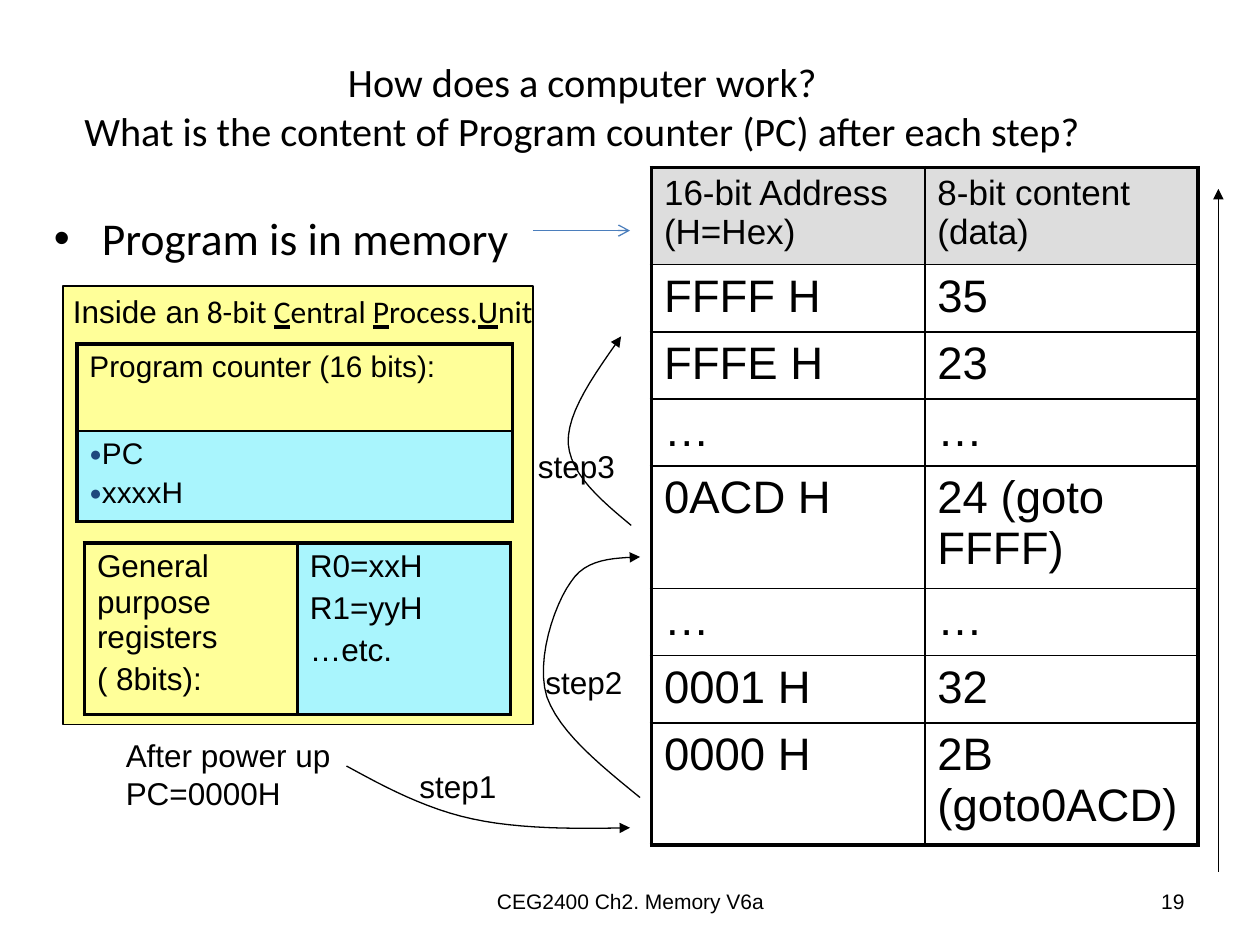
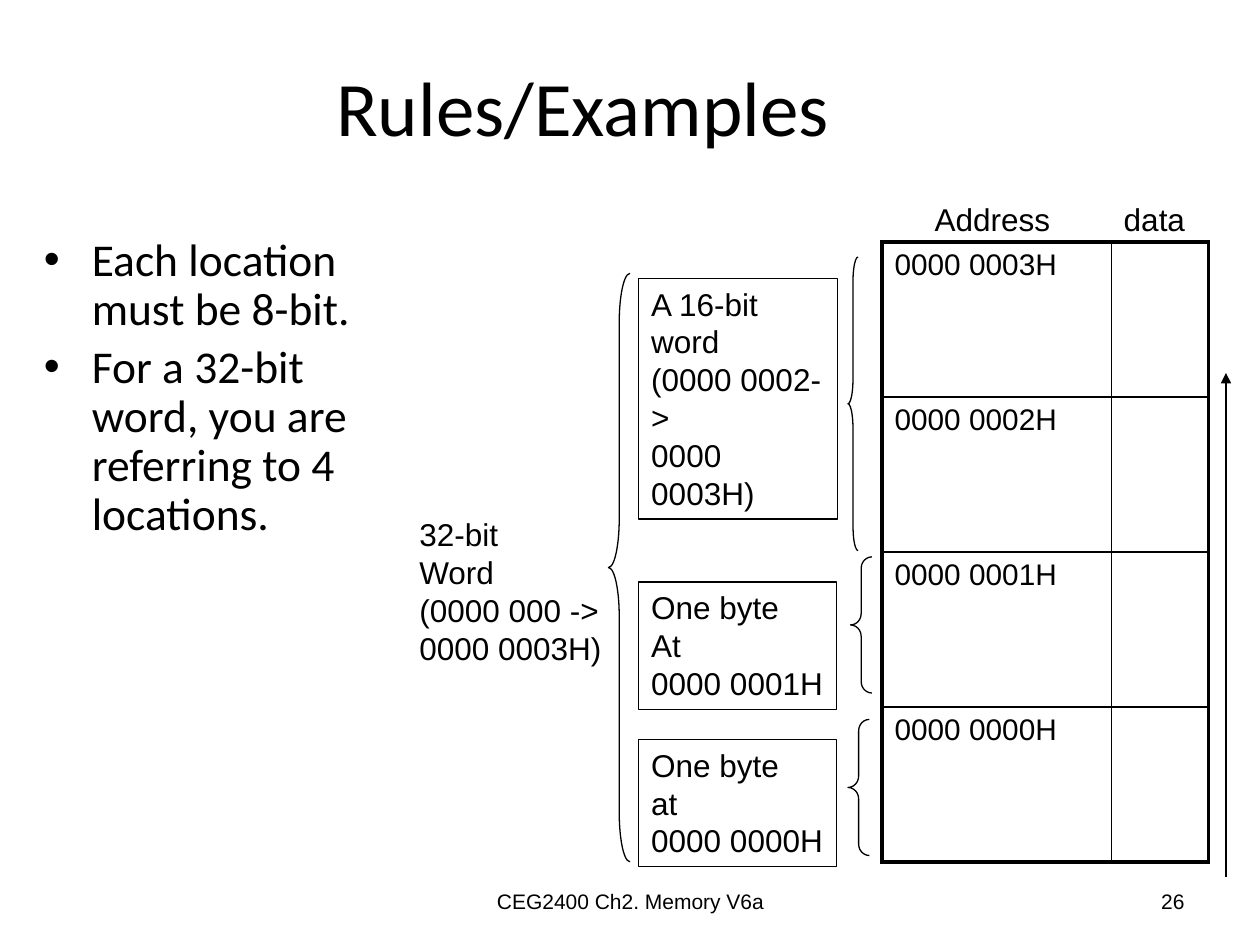
from lxml.etree import SubElement
from pptx import Presentation
from pptx.dml.color import RGBColor
from pptx.enum.shapes import MSO_CONNECTOR, MSO_SHAPE
from pptx.enum.text import MSO_ANCHOR, MSO_AUTO_SIZE, PP_ALIGN
from pptx.oxml.ns import qn
from pptx.util import Inches, Pt

BLACK = RGBColor(0x00, 0x00, 0x00)
GREY = RGBColor(0xDD, 0xDD, 0xDD)
YELLOW = RGBColor(0xFF, 0xFF, 0x99)
CYAN = RGBColor(0xA9, 0xF5, 0xFD)
BLUE = RGBColor(0x4B, 0x7E, 0xBC)
NAVY = RGBColor(0x1F, 0x49, 0x7D)
THICK, MEDIUM, THIN = 2.25, 1, 0.75
FOOTER = "CEG2400 Ch2. Memory V6a"


def write_lines(frame, lines, size, font="Arial", align=PP_ALIGN.LEFT,
                gap=0, spacing=None, hanging=False):
    """Fill a text frame with one paragraph per line; gap is a share of the size."""
    for number, line in enumerate(lines):
        para = frame.paragraphs[0] if number == 0 else frame.add_paragraph()
        para.text = line
        para.alignment = align
        para.font.size = Pt(size)
        para.font.name = font
        para.font.color.rgb = BLACK
        if number and gap:
            para.space_before = Pt(size * gap)
        if spacing:
            para.line_spacing = spacing
        if hanging:
            props = para._p.get_or_add_pPr()
            props.set("marL", str(Inches(0.38)))
            props.set("indent", str(-Inches(0.38)))
            SubElement(props, qn("a:buFont"), typeface="Arial")
            SubElement(props, qn("a:buChar"), char="•")


def add_grid(page, left, top, widths, heights, rows, size, fills=None, inner=MEDIUM):
    """Add a table with a thick frame; fills holds one row of colours per table row."""
    table = page.shapes.add_table(
        len(heights), len(widths), Inches(left), Inches(top),
        Inches(sum(widths)), Inches(sum(heights))).table
    table.first_row = table.horz_banding = False
    for column, width in zip(table.columns, widths):
        column.width = Inches(width)
    last_row, last_column = len(heights) - 1, len(widths) - 1
    for r, height in enumerate(heights):
        table.rows[r].height = Inches(height)
        for c, text in enumerate(rows[r]):
            cell = table.cell(r, c)
            write_lines(cell.text_frame, text.split("\n"), size, gap=0.2)
            props = cell._tc.get_or_add_tcPr()
            edges = {"L": c == 0, "R": c == last_column,
                     "T": r == 0, "B": r == last_row}
            for side, outer in edges.items():
                border = SubElement(props, qn(f"a:ln{side}"),
                                    w=str(Pt(THICK if outer else inner)))
                paint = SubElement(border, qn("a:solidFill"))
                SubElement(paint, qn("a:srgbClr"), val=str(BLACK))
            colour = fills[r][c] if fills else None
            if colour:
                cell.fill.solid()
                cell.fill.fore_color.rgb = colour
            else:
                cell.fill.background()
    return table


deck = Presentation()
deck.slide_width, deck.slide_height = Inches(10), Inches(7.5)

# Titles, body text and footers
pages = []
for title, title_size, number, body, body_box, spacing in [
    ("How does a computer work?\v"
     "What is the content of Program counter (PC) after each step?", 23, "19",
     ["Program is in memory"], (0.33, 1.62, 4.58, 4.82), None),
    ("Rules/Examples", 44, "26",
     ["Each location must be 8-bit.",
      "For a 32-bit word, you are referring to 4 locations."],
     (0.25, 1.83, 3.08, 4.82), 0.9),
]:
    page = deck.slides.add_slide(deck.slide_layouts[5])
    pages.append(page)
    heading = page.shapes.title
    heading.left, heading.top = Inches(0.5), Inches(0.13)
    heading.width, heading.height = Inches(8.25), Inches(1.42)
    heading.text_frame.auto_size = MSO_AUTO_SIZE.NONE
    heading.text_frame.vertical_anchor = MSO_ANCHOR.MIDDLE
    write_lines(heading.text_frame, [title], title_size, "Calibri", PP_ALIGN.CENTER)

    box = page.shapes.add_textbox(*map(Inches, body_box))
    box.text_frame.word_wrap = True
    write_lines(box.text_frame, body, 26, "Calibri", gap=0.2,
                spacing=spacing, hanging=True)

    for text, left, width, align in [(FOOTER, 3.42, 3.17, PP_ALIGN.CENTER),
                                     (number, 7.17, 2.33, PP_ALIGN.RIGHT)]:
        box = page.shapes.add_textbox(Inches(left), Inches(6.95),
                                      Inches(width), Inches(0.4))
        box.text_frame.word_wrap = True
        box.text_frame.vertical_anchor = MSO_ANCHOR.MIDDLE
        write_lines(box.text_frame, [text], 12, align=align)
computer, rules = pages

# Memory table and the processor
add_grid(computer, 5.17, 1.33, [2.17, 2.17],
         [0.77, 0.53, 0.53, 0.53, 0.97, 0.53, 0.53, 0.97],
         [("", "")] + [("FFFF H", "35"), ("FFFE H", "23"), ("…", "…"),
                       ("0ACD H", "24 (goto FFFF)"), ("…", "…"),
                       ("0001 H", "32"), ("0000 H", "2B (goto0ACD)")],
         26, [(GREY, GREY)] + [(None, None)] * 7)
memory = computer.shapes[-1].table
for c, label in enumerate(["16-bit Address (H=Hex)", "8-bit content (data)"]):
    write_lines(memory.cell(0, c).text_frame, [label], 20)

processor = computer.shapes.add_shape(MSO_SHAPE.RECTANGLE, Inches(0.5), Inches(2.27),
                                      Inches(3.73), Inches(3.48))
processor.shadow.inherit = False
processor.fill.solid()
processor.fill.fore_color.rgb = YELLOW
processor.line.color.rgb = BLACK
processor.line.width = Pt(THIN)

box = computer.shapes.add_textbox(Inches(0.48), Inches(2.27), Inches(3.94), Inches(0.4))
box.text_frame.word_wrap = False
para = box.text_frame.paragraphs[0]
para.font.size = Pt(18)
for text, font, underlined in [
    ("Inside a", "Arial", False), ("n 8-bit ", "Calibri", False),
    ("C", "Calibri", True), ("entral ", "Calibri", False),
    ("P", "Calibri", True), ("rocess.", "Calibri", False),
    ("U", "Calibri", True), ("nit", "Calibri", False),
]:
    span = para.add_run()
    span.text = text
    span.font.size = Pt(18)
    span.font.name = font
    span.font.underline = underlined
    span.font.color.rgb = BLACK

add_grid(computer, 0.67, 4.31, [1.69, 1.69], [1.36],
         [("General purpose registers\n( 8bits):", "R0=xxH\nR1=yyH\n…etc.")],
         18, [(YELLOW, CYAN)], inner=THICK)
counter = add_grid(computer, 0.61, 2.73, [3.46], [0.69, 0.72],
                   [("Program counter (16 bits):",), ("PC\nxxxxH",)],
                   17, [(YELLOW,), (CYAN,)])
for para in counter.cell(1, 0).text_frame.paragraphs:
    props = para._p.get_or_add_pPr()
    SubElement(SubElement(props, qn("a:buClr")), qn("a:srgbClr"), val=str(NAVY))
    SubElement(props, qn("a:buSzPct"), val="70000")
    SubElement(props, qn("a:buFont"), typeface="Arial")
    SubElement(props, qn("a:buChar"), char="●")

# Address table and its boxes
add_grid(rules, 7, 1.92, [1.82, 0.77], [1.23] * 4,
         [(f"0000 000{n}H", "") for n in (3, 2, 1, 0)], 17)

for top, width, height, wrap, lines in [
    (2.21, 1.58, 1.91, True, ["A 16-bit word", "(0000 0002->", "0000 0003H)"]),
    (5.87, 1.57, 1.01, False, ["One byte", "at", "0000 0000H"]),
    (4.62, 1.57, 1.01, False, ["One byte", "At", "0000 0001H"]),
]:
    box = rules.shapes.add_shape(MSO_SHAPE.RECTANGLE, Inches(5.07), Inches(top),
                                 Inches(width), Inches(height))
    box.shadow.inherit = False
    box.fill.background()
    box.line.color.rgb = BLACK
    box.line.width = Pt(THIN)
    box.text_frame.word_wrap = wrap
    box.text_frame.vertical_anchor = MSO_ANCHOR.TOP
    write_lines(box.text_frame, lines, 18)

for left, top, width, height in [(4.83, 2.17, 0.17, 4.67), (6.73, 2.04, 0.08, 2.33),
                                 (6.75, 4.42, 0.17, 1.08), (6.73, 5.71, 0.17, 1.08)]:
    brace = rules.shapes.add_shape(MSO_SHAPE.LEFT_BRACE, Inches(left), Inches(top),
                                   Inches(width), Inches(height))
    brace.shadow.inherit = False
    brace.adjustments[0] = height / width / 12
    brace.fill.background()
    brace.line.color.rgb = BLACK
    brace.line.width = Pt(THIN)

# Free labels
for page, left, top, width, height, lines in [
    (computer, 0.9, 5.79, 1.83, 0.7, ["After power up", "PC=0000H"]),
    (computer, 3.23, 6.04, 0.81, 0.4, ["step1"]),
    (computer, 4.23, 5.21, 0.81, 0.4, ["step2"]),
    (computer, 4.17, 3.5, 0.81, 0.4, ["step3"]),
    (rules, 3.23, 4.04, 1.75, 1.3,
     ["32-bit", "Word", "(0000 000 ->", "0000 0003H)"]),
    (rules, 7.32, 1.54, 1.19, 0.4, ["Address"]),
    (rules, 8.82, 1.54, 0.69, 0.4, ["data"]),
]:
    box = page.shapes.add_textbox(Inches(left), Inches(top),
                                  Inches(width), Inches(height))
    box.text_frame.word_wrap = False
    write_lines(box.text_frame, lines, 18)

# Straight and curved arrows
arrows = []
for page, x1, y1, x2, y2, colour, head in [
    (computer, 9.67, 6.92, 9.67, 1.5, BLACK, "triangle"),
    (computer, 4.23, 1.83, 5, 1.83, BLUE, "arrow"),
    (rules, 9.73, 6.96, 9.73, 2.96, BLACK, "triangle"),
]:
    arrow = page.shapes.add_connector(MSO_CONNECTOR.STRAIGHT, Inches(x1), Inches(y1),
                                      Inches(x2), Inches(y2))
    arrows.append((arrow, colour, head))

# Each step is a chain of cubic curves: start, then two handles and an end per curve
STEPS = [
    [(2.75, 6.08), (3.06, 6.25), (3.38, 6.42), (3.75, 6.5),
     (4.12, 6.58), (4.56, 6.58), (5, 6.57)],
    [(5.08, 6.33), (4.76, 6.07), (4.44, 5.81), (4.34, 5.53),
     (4.25, 5.24), (4.4, 4.8), (4.53, 4.62), (4.65, 4.43), (4.87, 4.43), (5.08, 4.42)],
    [(5.01, 4.17), (4.77, 3.97), (4.53, 3.77), (4.51, 3.52),
     (4.5, 3.27), (4.72, 2.97), (4.93, 2.67)],
]
PIECES = 12
for step in STEPS:
    points = []
    for first in range(0, len(step) - 1, 3):
        curve = step[first:first + 4]
        for piece in range(1, PIECES + 1):
            t = piece / PIECES
            weights = ((1 - t) ** 3, 3 * t * (1 - t) ** 2, 3 * t ** 2 * (1 - t), t ** 3)
            points.append(tuple(Inches(sum(w * point[axis] for w, point
                                           in zip(weights, curve))) for axis in (0, 1)))
    builder = computer.shapes.build_freeform(Inches(step[0][0]), Inches(step[0][1]))
    builder.add_line_segments(points, close=False)
    arrow = builder.convert_to_shape()
    arrow.fill.background()
    arrows.append((arrow, BLACK, "triangle"))

for arrow, colour, head in arrows:
    arrow.line.color.rgb = colour
    arrow.line.width = Pt(THIN)
    SubElement(arrow.get_or_add_ln(), qn("a:tailEnd"), type=head)
    SubElement(arrow._element.spPr, qn("a:effectLst"))

deck.save("out.pptx")
